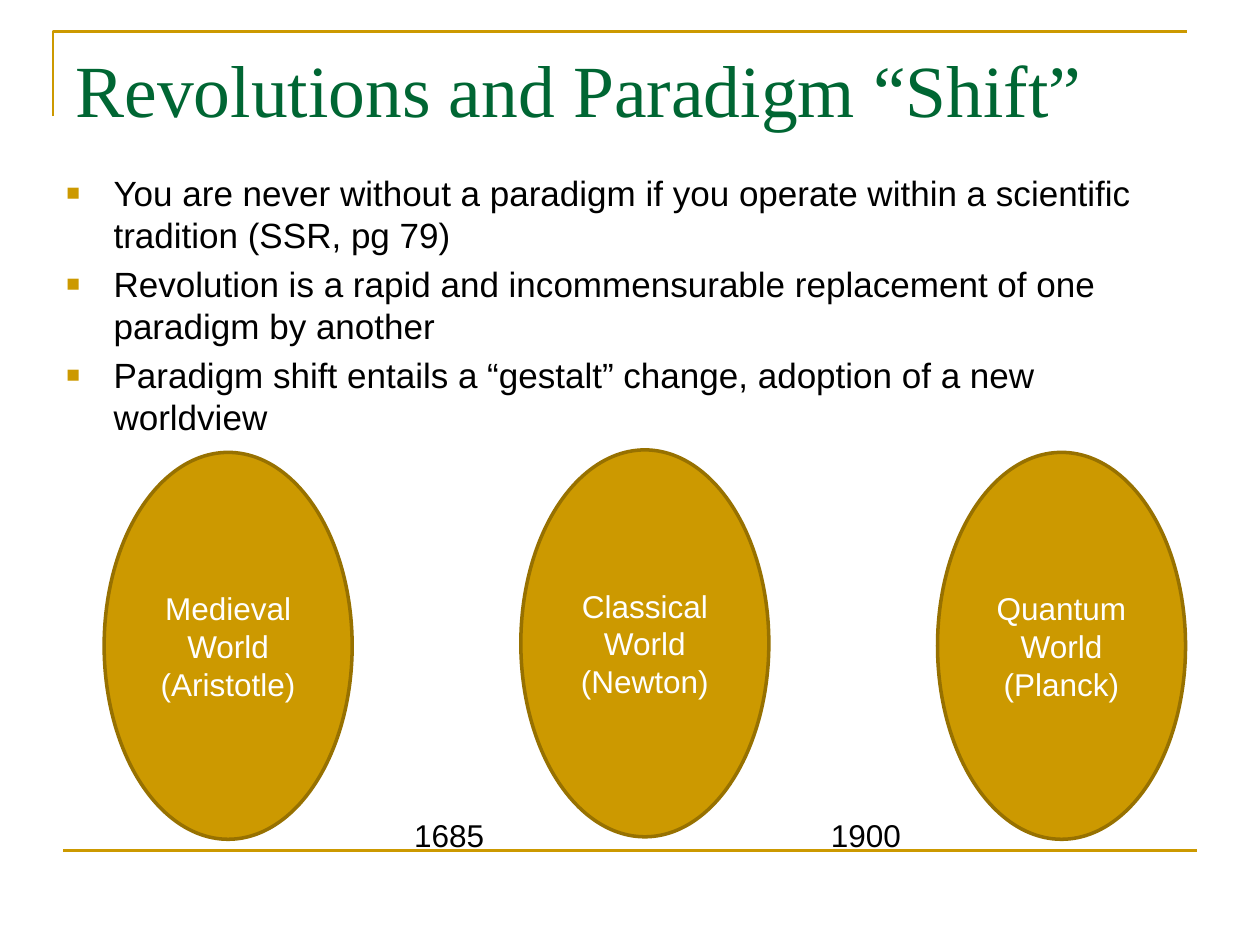
from pptx import Presentation
from pptx.dml.color import RGBColor
from pptx.enum.shapes import MSO_CONNECTOR, MSO_SHAPE
from pptx.enum.text import MSO_ANCHOR, PP_ALIGN
from pptx.oxml.ns import qn
from pptx.util import Cm, Pt
from lxml.etree import SubElement

GOLD = RGBColor(0xCC, 0x99, 0x00)
BROWN = RGBColor(0x97, 0x71, 0x00)
GREEN = RGBColor(0x00, 0x66, 0x33)
BLACK = RGBColor(0, 0, 0)
WHITE = RGBColor(255, 255, 255)


def write(para, text, size=18, font="Arial", color=BLACK, align=PP_ALIGN.LEFT):
    """Fill a paragraph; a newline in the text is a line break."""
    para.alignment = align
    for i, line in enumerate(text.split("\n")):
        if i:
            para.add_line_break()
        run = para.add_run()
        run.text = line
        run.font.size = Pt(size)
        run.font.name = font
        run.font.color.rgb = color


def add_bullet(para, color, indent):
    props = para._p.get_or_add_pPr()
    props.set("marL", str(indent))
    props.set("indent", str(-indent))
    tint = SubElement(props, qn("a:buClr"))
    SubElement(tint, qn("a:srgbClr"), val=str(color))
    SubElement(props, qn("a:buSzPct"), val="65000")
    SubElement(props, qn("a:buFont"), typeface="Arial")
    SubElement(props, qn("a:buChar"), char="■")


class Deck:
    def __init__(self):
        self.file = Presentation()
        self.file.slide_width, self.file.slide_height = Cm(25.4), Cm(19.05)
        self.slide = self.file.slides.add_slide(self.file.slide_layouts[5])
        self.shapes = self.slide.shapes

    def title(self, text, x, y, w, h):
        box = self.shapes.title
        box.left, box.top, box.width, box.height = Cm(x), Cm(y), Cm(w), Cm(h)
        frame = box.text_frame
        frame.vertical_anchor = MSO_ANCHOR.TOP
        write(frame.paragraphs[0], text, size=42, font="Times New Roman", color=GREEN)

    def corner(self, x, y, w, h):
        pen = self.shapes.build_freeform(Cm(x), Cm(y + h))
        pen.add_line_segments([(Cm(x), Cm(y)), (Cm(x + w), Cm(y))], close=False)
        shape = pen.convert_to_shape()
        shape.shadow.inherit = False
        shape.fill.background()
        shape.line.color.rgb = GOLD
        shape.line.width = Pt(1.5)

    def rule(self, x, y, w):
        line = self.shapes.add_connector(
            MSO_CONNECTOR.STRAIGHT, Cm(x), Cm(y), Cm(x + w), Cm(y))
        line.line.color.rgb = GOLD
        line.line.width = Pt(1.5)
        SubElement(line._element.spPr, qn("a:effectLst"))

    def bullets(self, items, x, y, w, h):
        frame = self.shapes.add_textbox(Cm(x), Cm(y), Cm(w), Cm(h)).text_frame
        frame.word_wrap = True
        for i, item in enumerate(items):
            para = frame.add_paragraph() if i else frame.paragraphs[0]
            para.space_before = Pt(4)
            add_bullet(para, GOLD, Cm(0.95))
            write(para, item, size=20)

    def oval(self, text, x, y, w, h):
        shape = self.shapes.add_shape(MSO_SHAPE.OVAL, Cm(x), Cm(y), Cm(w), Cm(h))
        shape.shadow.inherit = False
        shape.fill.solid()
        shape.fill.fore_color.rgb = GOLD
        shape.line.color.rgb = BROWN
        shape.line.width = Pt(2)
        frame = shape.text_frame
        frame.word_wrap = True
        frame.vertical_anchor = MSO_ANCHOR.MIDDLE
        write(frame.paragraphs[0], text, color=WHITE, align=PP_ALIGN.CENTER)

    def label(self, text, x, y, w, h):
        frame = self.shapes.add_textbox(Cm(x), Cm(y), Cm(w), Cm(h)).text_frame
        frame.word_wrap = False
        write(frame.paragraphs[0], text)


def main():
    deck = Deck()

    # Frame lines
    deck.corner(1.07, 0.64, 22.86, 1.7)
    deck.rule(1.27, 17.15, 22.86)

    # Title and points
    deck.title("Revolutions and Paradigm “Shift”", 1.27, 0.76, 22.86, 3.18)
    deck.bullets([
        "You are never without a paradigm if you operate within a scientific "
        "tradition (SSR, pg 79)",
        "Revolution is a rapid and incommensurable replacement of one "
        "paradigm by another",
        "Paradigm shift entails a “gestalt” change, adoption of a new worldview",
    ], 1.09, 3.33, 22.86, 5.79)

    # Worlds, evenly spaced, the middle one slightly raised
    step = 8.4
    worlds = [("Medieval World\n(Aristotle)", 9.12),
              ("Classical World\n(Newton)", 9.07),
              ("Quantum World (Planck)", 9.12)]
    for i, (name, top) in enumerate(worlds):
        deck.oval(name, 2.1 + i * step, top, 5, 7.8)

    # Years of the shifts, between the worlds
    for i, year in enumerate(["1685", "1900"]):
        deck.label(year, 8.1 + i * step, 16.33, 1.93, 1.02)

    deck.file.save("out.pptx")


if __name__ == "__main__":
    main()
